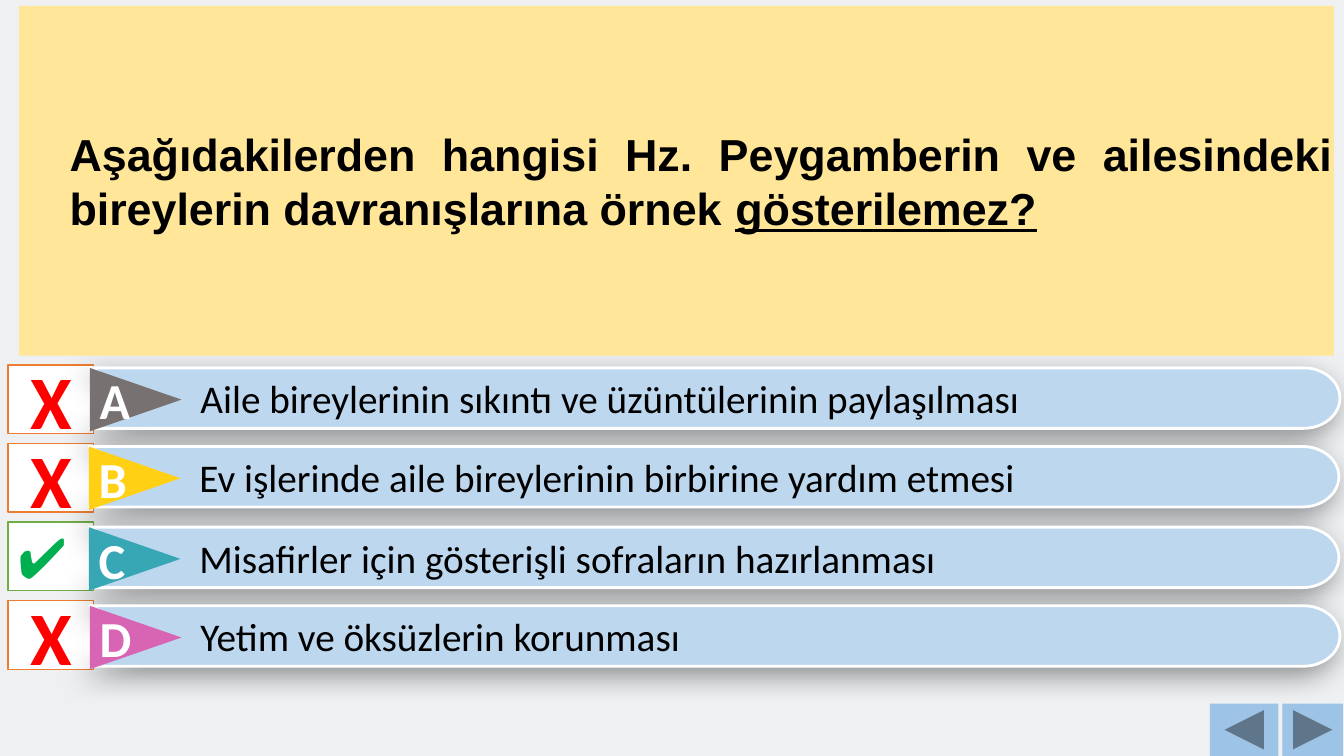
from math import cos, pi, sin

from lxml.etree import SubElement
from pptx import Presentation
from pptx.dml.color import RGBColor
from pptx.enum.shapes import MSO_SHAPE as Preset
from pptx.enum.text import MSO_ANCHOR as Anchor, PP_ALIGN as Align
from pptx.oxml.ns import qn
from pptx.util import Emu, Pt

PX = 9144
ROW_PITCH = 78
WRONG = ("X", 54, "FF0000", True, Align.CENTER, "ED7D31")
RIGHT = ("✔", 40, "00B050", False, Align.LEFT, "70AD47")
OPTIONS = [
    ("A", "Aile bireylerinin sıkıntı ve üzüntülerinin paylaşılması", "777171", WRONG, 89, 365),
    ("B", "Ev işlerinde aile bireylerinin birbirine yardım etmesi", "FFD013", WRONG, 88, 443),
    ("C", "Misafirler için gösterişli sofraların hazırlanması", "38A7B5", RIGHT, 88, 523),
    ("D", "Yetim ve öksüzlerin korunması", "D864B4", WRONG, 89, 601),
]


def px(length):
    return Emu(round(length * PX))


def paint(target, color):
    target.solid()
    target.fore_color.rgb = RGBColor.from_string(color)


def style(shape, fill, outline=None, weight=1):
    shape.shadow.inherit = False
    paint(shape.fill, fill)
    if outline:
        paint(shape.line.fill, outline)
        shape.line.width = Pt(weight)
    else:
        shape.line.fill.background()


def add_block(shapes, preset, box, fill, outline=None):
    block = shapes.add_shape(preset, *map(px, box))
    style(block, fill, outline)
    return block


def write(shape, runs, size, color, font="Calibri", bold=False, align=Align.CENTER, indent=0):
    frame = shape.text_frame
    frame.word_wrap = True
    frame.vertical_anchor = Anchor.MIDDLE
    paragraph = frame.paragraphs[0]
    paragraph.alignment = align
    properties = paragraph._p.get_or_add_pPr()
    properties.set("marL", str(px(indent)))
    properties.set("indent", "0")
    for text, underline in runs:
        run = paragraph.add_run()
        run.text = text
        looks = {"name": font, "size": Pt(size), "bold": bold, "underline": underline}
        for key, value in looks.items():
            setattr(run.font, key, value)
        paint(run.font.fill, color)


def cast_shadow(shape):
    effects = shape._element.spPr.find(qn("a:effectLst"))
    shadow = SubElement(effects, qn("a:outerShdw"), blurRad=str(Pt(20)), dist=str(Pt(7)),
                        dir="8100000", algn="tr", rotWithShape="0")
    black = SubElement(shadow, qn("a:srgbClr"), val="000000")
    SubElement(black, qn("a:alpha"), val="40000")


def add_bar(shapes, left, top, answer):
    width, height, cap, notch, steps = 1240, 60, 36, 62, 24
    middle = top + height / 2
    angles = [pi * step / steps - pi / 2 for step in range(steps + 1)]
    rounded_end = [(left + width - cap + cap * cos(a), middle + height / 2 * sin(a)) for a in angles]
    outline = rounded_end + [(left, top + height), (left + notch, middle)]
    builder = shapes.build_freeform(px(left), px(top))
    builder.add_line_segments([(px(x), px(y)) for x, y in outline], close=True)
    bar = builder.convert_to_shape()
    style(bar, "BDD7EE", "FFFFFF", 2)
    cast_shadow(bar)
    write(bar, [(answer, False)], 28, "000000", align=Align.LEFT, indent=100)


def add_letter(shapes, left, top, letter, color):
    arrow = add_block(shapes, Preset.ISOSCELES_TRIANGLE, (left + 14, top - 14, 63, 91), color)
    arrow.rotation = 90
    write(arrow, [(letter, False)], 36, "FFFFFF", bold=True)
    arrow.text_frame._txBody.bodyPr.set("vert", "vert270")


def add_mark(shapes, row, mark):
    symbol, size, color, bold, align, outline = mark
    box = (8, 362 + row * ROW_PITCH, 85, 68)
    verdict = add_block(shapes, Preset.RECTANGLE, box, "FFFFFF", outline)
    write(verdict, [(symbol, False)], size, color, bold=bold, align=align)


def add_question(shapes):
    question = add_block(shapes, Preset.RECTANGLE, (19, 6, 1304, 347), "FFE699")
    for side in ("left", "top", "right", "bottom"):
        setattr(question.text_frame, f"margin_{side}", 0)
    runs = [
        ("Aşağıdakilerden hangisi Hz. Peygamberin ve ailesindeki "
         "bireylerin davranışlarına örnek ", False),
        ("gösterilemez?", True),
    ]
    write(question, runs, 32, "000000", "Arial", True, Align.JUSTIFY, 50)


def main():
    deck = Presentation()
    deck.slide_width, deck.slide_height = px(1333), px(750)
    slide = deck.slides.add_slide(deck.slide_layouts[6])
    paint(slide.background.fill, "EEF0F2")
    shapes = slide.shapes

    for row, option in enumerate(OPTIONS):
        add_mark(shapes, row, option[3])
    for letter, answer, color, _, left, top in OPTIONS:
        choice = shapes.add_group_shape().shapes
        add_bar(choice, left, top, answer)
        add_letter(choice, left, top, letter, color)
    add_question(shapes)
    add_block(shapes, Preset.ACTION_BUTTON_BACK_OR_PREVIOUS, (1200, 698, 68, 52), "9DC3E6")
    add_block(shapes, Preset.ACTION_BUTTON_FORWARD_OR_NEXT, (1272, 698, 60, 52), "9DC3E6")
    deck.save("out.pptx")


if __name__ == "__main__":
    main()
